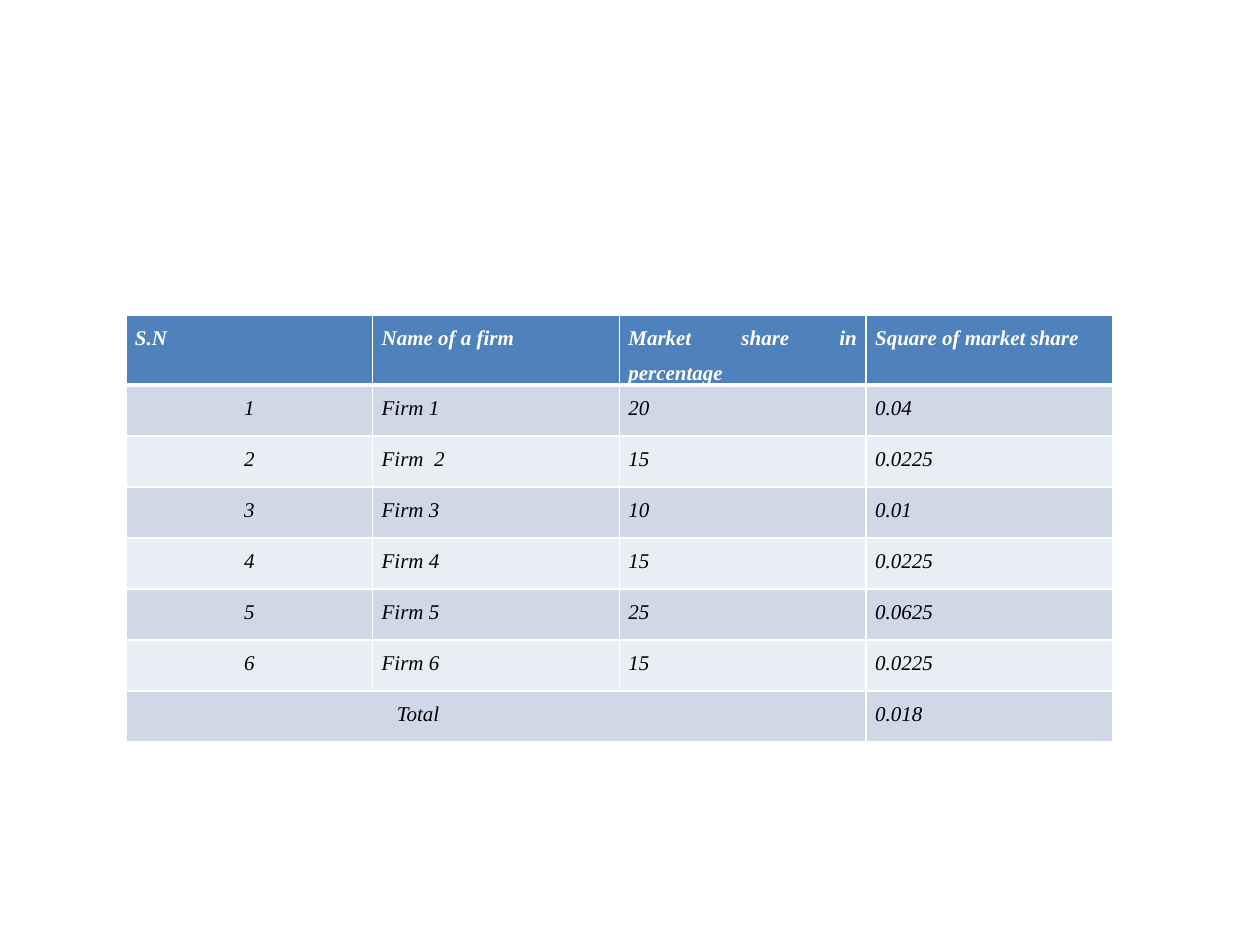
from lxml import etree
from pptx import Presentation
from pptx.dml.color import RGBColor
from pptx.enum.text import PP_ALIGN
from pptx.oxml.ns import qn
from pptx.util import Pt

PX = 914400 // 126
LEFT, MID, JUST = PP_ALIGN.LEFT, PP_ALIGN.CENTER, PP_ALIGN.JUSTIFY
WHITE = RGBColor(0xFF, 0xFF, 0xFF)
BLACK = RGBColor(0x00, 0x00, 0x00)
BLUE = RGBColor(0x4F, 0x81, 0xBD)
DARK = RGBColor(0xD0, 0xD8, 0xE8)
PALE = RGBColor(0xE9, 0xED, 0xF4)
FONT = {"name": "Times New Roman", "size": Pt(12), "italic": True}
INSET = {"margin_left": 9 * PX, "margin_right": 9 * PX,
         "margin_top": 0, "margin_bottom": 0}
ROWS = [
    ("S.N", "Name of a firm", "Market share in percentage",
     "Square of market share"),
    ("1", "Firm 1", "20", "0.04"),
    ("2", "Firm  2", "15", "0.0225"),
    ("3", "Firm 3", "10", "0.01"),
    ("4", "Firm 4", "15", "0.0225"),
    ("5", "Firm 5", "25", "0.0625"),
    ("6", "Firm 6", "15", "0.0225"),
    ("Total", "", "", "0.018"),
]
LAST = len(ROWS) - 1


def put(item, form):
    for key, val in form.items():
        setattr(item, key, val)


def edge(cell, side, width):
    line = etree.SubElement(cell._tc.get_or_add_tcPr(), qn("a:" + side),
                            w=str(Pt(width)))
    fill = etree.SubElement(line, qn("a:solidFill"))
    etree.SubElement(fill, qn("a:srgbClr"), val=str(WHITE))


deck = Presentation()
put(deck, {"slide_width": 1260 * PX, "slide_height": 945 * PX})
slide = deck.slides.add_slide(deck.slide_layouts[6])
frame = slide.shapes.add_table(len(ROWS), 4, 126 * PX, 315 * PX,
                               987 * PX, 433 * PX)
table = frame.table
for col in table.columns:
    col.width = 987 * PX // 4
for row in table.rows:
    row.height = 51 * PX
frame.height = 433 * PX
table.cell(LAST, 0).merge(table.cell(LAST, 2))

for r, words in enumerate(ROWS):
    head = r == 0
    for c, word in enumerate(words):
        cell = table.cell(r, c)
        put(cell, INSET)
        for side in ("lnL", "lnR", "lnT", "lnB"):
            thick = (r, side) in ((0, "lnB"), (1, "lnT"))
            edge(cell, side, 3 if thick else 1)
        cell.fill.solid()
        cell.fill.fore_color.rgb = BLUE if head else DARK if r % 2 else PALE
        if not word:
            continue
        para = cell.text_frame.paragraphs[0]
        put(para, {"line_spacing": 1.5, "alignment": JUST})
        if c == 0 and 0 < r < LAST:
            para.alignment = MID
        elif c == 1 and r in (5, 6):
            para.alignment = LEFT
        elif word == "Total":
            para._p.get_or_add_pPr().set("marL", str(262 * PX))
        run = para.add_run()
        run.text = word
        put(run.font, {**FONT, "bold": head})
        run.font.color.rgb = WHITE if head else BLACK

deck.save("out.pptx")
